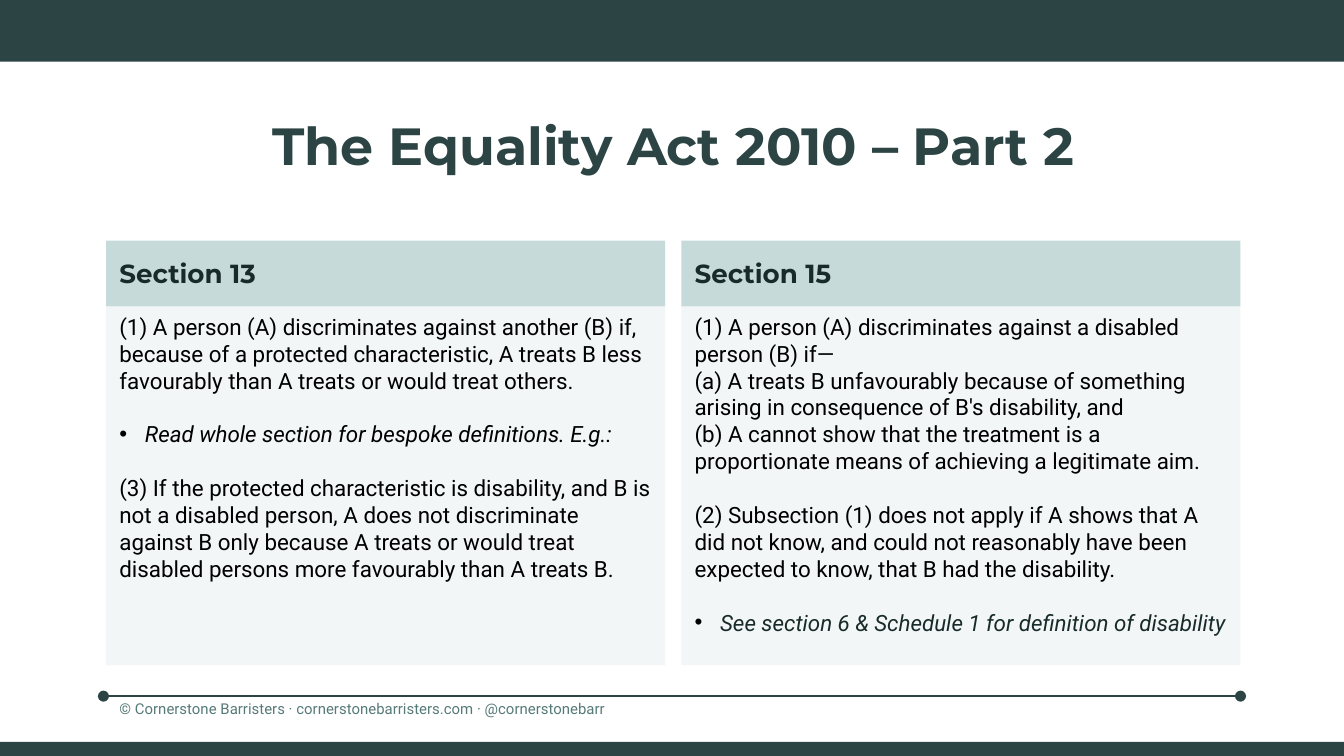
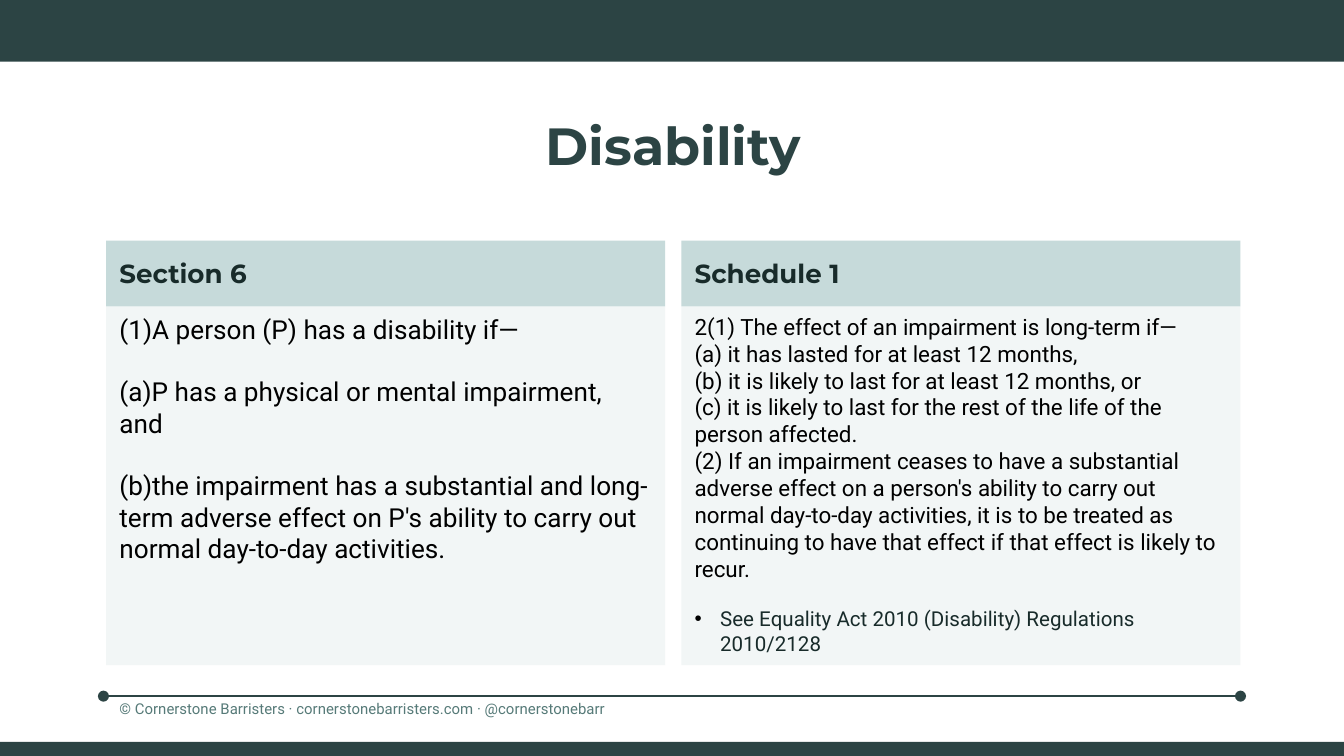
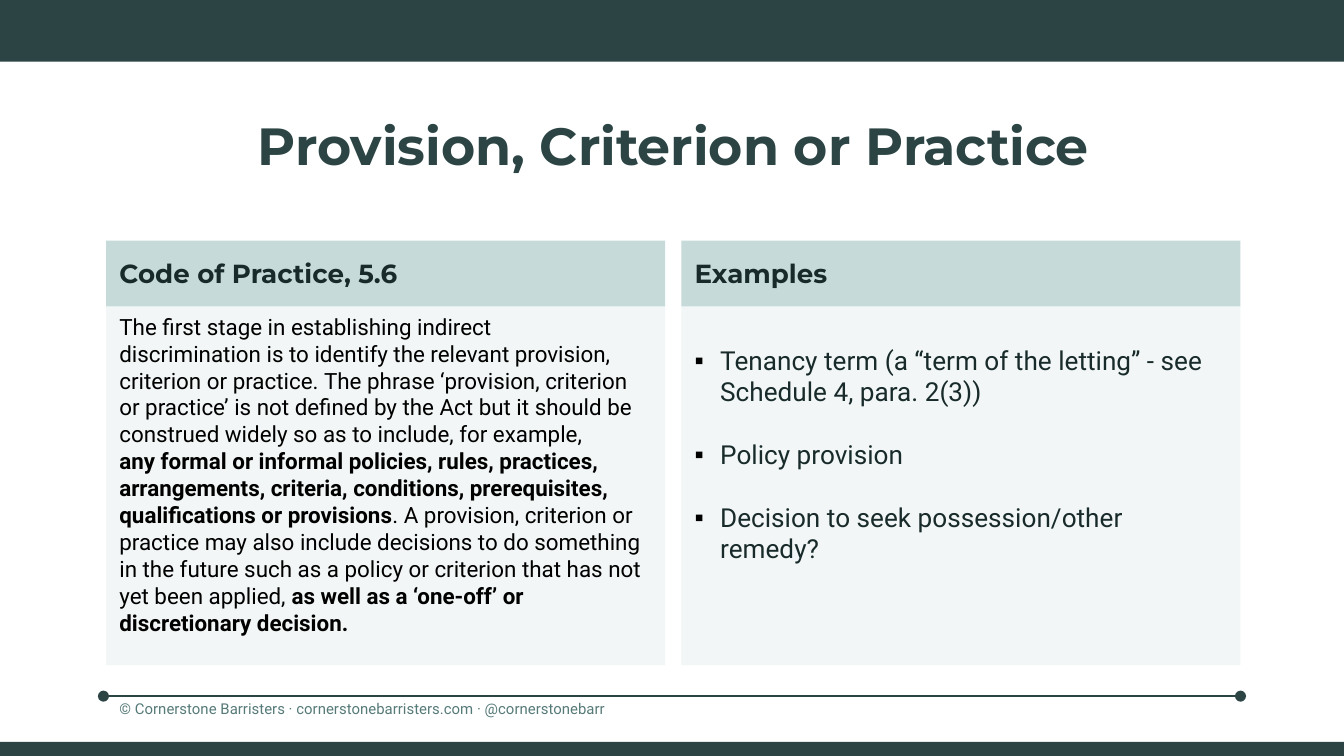
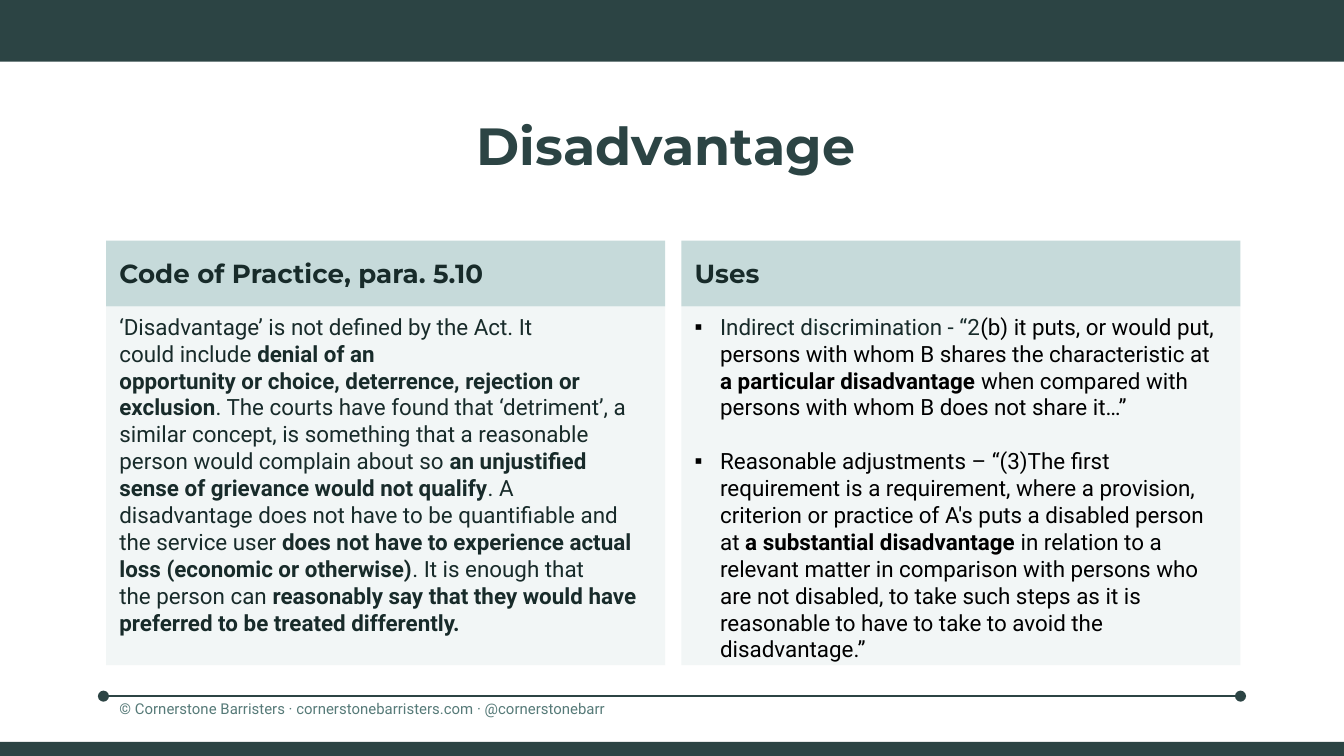
from dataclasses import dataclass
from typing import NamedTuple

from lxml.etree import SubElement
from pptx import Presentation
from pptx.dml.color import RGBColor
from pptx.enum.shapes import MSO_CONNECTOR, MSO_SHAPE
from pptx.enum.text import MSO_ANCHOR, MSO_AUTO_SIZE, PP_ALIGN
from pptx.oxml.ns import qn
from pptx.util import Inches, Pt

DARK = RGBColor(0x2C, 0x44, 0x44)
INK = RGBColor(0x18, 0x2B, 0x2A)
BLACK = RGBColor(0, 0, 0)
SAGE = RGBColor(0xC6, 0xDA, 0xDA)
MIST = RGBColor(0xF2, 0xF6, 0xF6)
MUTED = RGBColor(0x56, 0x7A, 0x78)
WHITE = RGBColor(0xFF, 0xFF, 0xFF)

HEADING_FONT, BODY_FONT, BULLET_FONT = "Montserrat", "Roboto", "Arial"
PAGE_WIDTH = 10
PAGE_HEIGHT = PAGE_WIDTH * 9 / 16
BAND_WIDTH = 10.14
MARGIN, GUTTER, COLUMN_WIDTH = 0.79, 0.12, 4.16
CONTENT_WIDTH = 2 * COLUMN_WIDTH + GUTTER
HEADER_TOP, HEADER_HEIGHT, BODY_HEIGHT = 1.79, 0.49, 2.67
INDENT = 0.19
LINE_PITCH = 1.2  # line height as a share of the text size
HARD_SPACE = chr(160)  # written as ~ in the wording below
FOOTER = "© Cornerstone Barristers · cornerstonebarristers.com · @cornerstonebarr"


class Area(NamedTuple):
    left: float
    top: float
    width: float
    height: float


class Span(NamedTuple):
    text: str
    color: RGBColor | None = None
    bold: bool = False
    italic: bool = False


@dataclass(frozen=True)
class Para:
    """A paragraph; gap leaves one line of its own size above it."""
    spans: tuple[Span, ...]
    size: float = 12
    color: RGBColor = BLACK
    font: str = BODY_FONT
    bullet: str = ""
    gap: bool = False
    align: PP_ALIGN = PP_ALIGN.LEFT


@dataclass(frozen=True)
class Panel:
    heading: str
    paras: tuple[Para, ...]
    lead_lines: int = 0


@dataclass(frozen=True)
class Topic:
    title: str
    panels: tuple[Panel, Panel]


def plain(text: str, **style) -> Para:
    return Para((Span(text),), **style)


def heading(text: str, size: float, color: RGBColor, **style) -> Para:
    return Para((Span(text, bold=True),), size, color, HEADING_FONT, **style)


def bold(text: str) -> Span:
    return Span(text, bold=True)


def set_bullet(para, mark: str) -> None:
    properties = para._p.get_or_add_pPr()
    properties.set("marL", str(Inches(INDENT)))
    properties.set("indent", str(-Inches(INDENT)))
    color = SubElement(properties, qn("a:buClr"))
    SubElement(color, qn("a:srgbClr"), val=str(BLACK))
    SubElement(properties, qn("a:buFont"), typeface=BULLET_FONT)
    SubElement(properties, qn("a:buChar"), char=mark)


def write(shape, paras: tuple[Para, ...], **frame_format) -> None:
    frame = shape.text_frame
    defaults = {"word_wrap": True, "vertical_anchor": MSO_ANCHOR.TOP}
    for name, value in (defaults | frame_format).items():
        setattr(frame, name, value)
    for index, item in enumerate(paras):
        para = frame.paragraphs[0] if index == 0 else frame.add_paragraph()
        para.alignment = item.align
        if item.gap:
            para.space_before = Pt(item.size * LINE_PITCH)
        if item.bullet:
            set_bullet(para, item.bullet)
        for piece in item.spans:
            span = para.add_run()
            span.text = piece.text.replace("~", HARD_SPACE)
            span.font.color.rgb = piece.color or item.color
            style = {"name": item.font, "size": Pt(item.size),
                     "bold": piece.bold, "italic": piece.italic}
            for name, value in style.items():
                setattr(span.font, name, value)


def add_block(page, area: Area, fill: RGBColor):
    block = page.shapes.add_shape(MSO_SHAPE.RECTANGLE, *map(Inches, area))
    block.shadow.inherit = False
    block.fill.solid()
    block.fill.fore_color.rgb = fill
    block.line.fill.background()
    return block


def add_text(page, area: Area, para: Para, **frame_format) -> None:
    box = page.shapes.add_textbox(*map(Inches, area))
    write(box, (para,), **frame_format)


def add_rule(page) -> None:
    """Footer line with a dot at each end."""
    ends = (0.77, 5.18, PAGE_WIDTH - 0.77, 5.18)
    rule = page.shapes.add_connector(MSO_CONNECTOR.STRAIGHT, *map(Inches, ends))
    rule.line.color.rgb = DARK
    rule.line.width = Pt(0.75)
    for end in ("a:headEnd", "a:tailEnd"):
        SubElement(rule.line._get_or_add_ln(), qn(end), type="oval")
    SubElement(rule._element.spPr, qn("a:effectLst"))


def add_furniture(page) -> None:
    page.background.fill.solid()
    page.background.fill.fore_color.rgb = WHITE
    add_rule(page)
    add_block(page, Area(0, 0, BAND_WIDTH, 0.46), DARK)
    insets = {f"margin_{side}": Inches(0.1)
              for side in ("left", "top", "right", "bottom")}
    add_text(page, Area(MARGIN, 5.14, 4.95, 0.31),
             plain(FOOTER, size=8, color=MUTED),
             auto_size=MSO_AUTO_SIZE.SHAPE_TO_FIT_TEXT, **insets)
    add_block(page, Area(0, 5.52, BAND_WIDTH, 0.11), DARK)


def add_panel(page, column: int, panel: Panel) -> None:
    left = MARGIN + column * (COLUMN_WIDTH + GUTTER)
    body = add_block(page, Area(left, HEADER_TOP + HEADER_HEIGHT,
                                COLUMN_WIDTH, BODY_HEIGHT), MIST)
    lead = Pt(panel.lead_lines * panel.paras[0].size * LINE_PITCH)
    write(body, panel.paras, margin_top=Inches(0.05) + lead)
    header = add_block(page, Area(left, HEADER_TOP, COLUMN_WIDTH,
                                  HEADER_HEIGHT), SAGE)
    write(header, (heading(panel.heading, 14, INK),),
          vertical_anchor=MSO_ANCHOR.MIDDLE)


def add_topic(deck, topic: Topic) -> None:
    page = deck.slides.add_slide(deck.slide_layouts[6])
    add_furniture(page)
    add_text(page, Area(MARGIN, 0.79, CONTENT_WIDTH, 0.58),
             heading(topic.title, 28, DARK, align=PP_ALIGN.CENTER))
    for column, panel in enumerate(topic.panels):
        add_panel(page, column, panel)


TOPICS = (
    Topic("The Equality Act 2010 – Part 2", (
        Panel("Section 13", (
            plain("(1) A person (A) discriminates against another (B) if, because of a "
                  "protected characteristic, A treats B less favourably than A treats or "
                  "would treat others."),
            Para((Span("Read whole section for bespoke definitions. E.g.:", italic=True),),
                 bullet="•", gap=True),
            plain("(3) If the protected characteristic is disability, and B is not a "
                  "disabled person, A does not discriminate against B only because A "
                  "treats or would treat disabled persons more favourably than A treats B.",
                  gap=True),
        )),
        Panel("Section 15", (
            plain("(1) A person (A) discriminates against a disabled person (B) if—"),
            plain("(a) A treats B unfavourably because of something arising in "
                  "consequence of B's disability, and"),
            plain("(b) A cannot show that the treatment is a proportionate means of "
                  "achieving a legitimate aim."),
            plain("(2) Subsection (1) does not apply if A shows that A did not know, and "
                  "could not reasonably have been expected to know, that B had the "
                  "disability.", gap=True),
            Para((Span("See section 6 & Schedule 1 for definition of disability",
                       italic=True),), color=INK, bullet="•", gap=True),
        )),
    )),
    Topic("Disability", (
        Panel("Section 6", (
            plain("(1)A person (P) has a disability if—", size=14),
            plain("(a)P has a physical or mental impairment, and", size=14, gap=True),
            plain("(b)the impairment has a substantial and long-term adverse effect on "
                  "P's ability to carry out normal day-to-day activities.",
                  size=14, gap=True),
        )),
        Panel("Schedule 1", (
            plain("2(1) The effect of an impairment is long-term if—"),
            plain("(a) it has lasted for at least 12 months,"),
            plain("(b) it is likely to last for at least 12 months, or"),
            plain("(c) it is likely to last for the rest of the life of the person "
                  "affected."),
            plain("(2) If an impairment ceases to have a substantial adverse effect on a "
                  "person's ability to carry out normal day-to-day activities, it is to be "
                  "treated as continuing to have that effect if that effect is likely to "
                  "recur."),
            plain("See Equality Act 2010 (Disability) Regulations 2010/2128",
                  size=11, color=INK, bullet="•", gap=True),
        )),
    )),
    Topic("Provision, Criterion or Practice", (
        Panel("Code of Practice, 5.6", (
            Para((
                Span("The first stage~in establishing indirect discrimination~is to "
                     "identify the relevant~provision, criterion or practice.~The phrase "
                     "‘provision, criterion or practice’ is not defined by the Act but it "
                     "should be construed widely so as to include, for example, "),
                bold("any~formal or informal~policies, rules, practices, arrangements, "
                     "criteria, conditions, prerequisites, qualifications or provisions"),
                Span(". A provision, criterion or practice may also include~decisions to "
                     "do something in the future~such as a policy or criterion~that has "
                     "not yet been applied, "),
                bold("as well as a ‘one-off’ or discretionary decision."),
            )),
        )),
        Panel("Examples", (
            plain("Tenancy term (a “term of the letting” - see Schedule 4, para. 2(3))",
                  size=14, color=INK, bullet="▪"),
            plain("Policy provision", size=14, color=INK, bullet="▪", gap=True),
            plain("Decision to seek possession/other remedy?",
                  size=14, color=INK, bullet="▪", gap=True),
        ), lead_lines=1),
    )),
    Topic("Disadvantage ", (
        Panel("Code of Practice, para. 5.10", (
            Para((
                Span("‘Disadvantage’ is not defined by the Act. It could~include "),
                bold("denial of an opportunity~or~choice,~deterrence,~rejection or "
                     "exclusion"),
                Span(". The courts have found that ‘detriment’, a similar concept, is "
                     "something that a reasonable person would complain about~so "),
                bold("an unjustified sense of grievance would not qualify"),
                Span(". A disadvantage does not have to be quantifiable and "
                     "the~service user~"),
                bold("does not have to experience actual loss (economic or otherwise)"),
                Span(". It is enough that the~person~can "),
                bold("reasonably say that they would have preferred to be treated "
                     "differently."),
            ), color=INK),
        )),
        Panel("Uses", (
            Para((
                Span("Indirect discrimination - “2", INK),
                Span("(b) it puts, or would put, persons with whom B shares the "
                     "characteristic at "),
                bold("a particular disadvantage"),
                Span(" when compared with persons with whom B does not share it…”"),
            ), bullet="▪"),
            Para((
                Span("Reasonable adjustments – “(3)The first requirement is a "
                     "requirement, where a provision, criterion or practice of A's puts a "
                     "disabled person at "),
                bold("a substantial disadvantage "),
                Span("in relation to a relevant matter in comparison with persons who are "
                     "not disabled, to take such steps as it is reasonable to have to take "
                     "to avoid the disadvantage.”"),
            ), bullet="▪", gap=True),
        )),
    )),
)


def main() -> None:
    deck = Presentation()
    deck.slide_width, deck.slide_height = Inches(PAGE_WIDTH), Inches(PAGE_HEIGHT)
    for topic in TOPICS:
        add_topic(deck, topic)
    deck.save("out.pptx")


if __name__ == "__main__":
    main()
